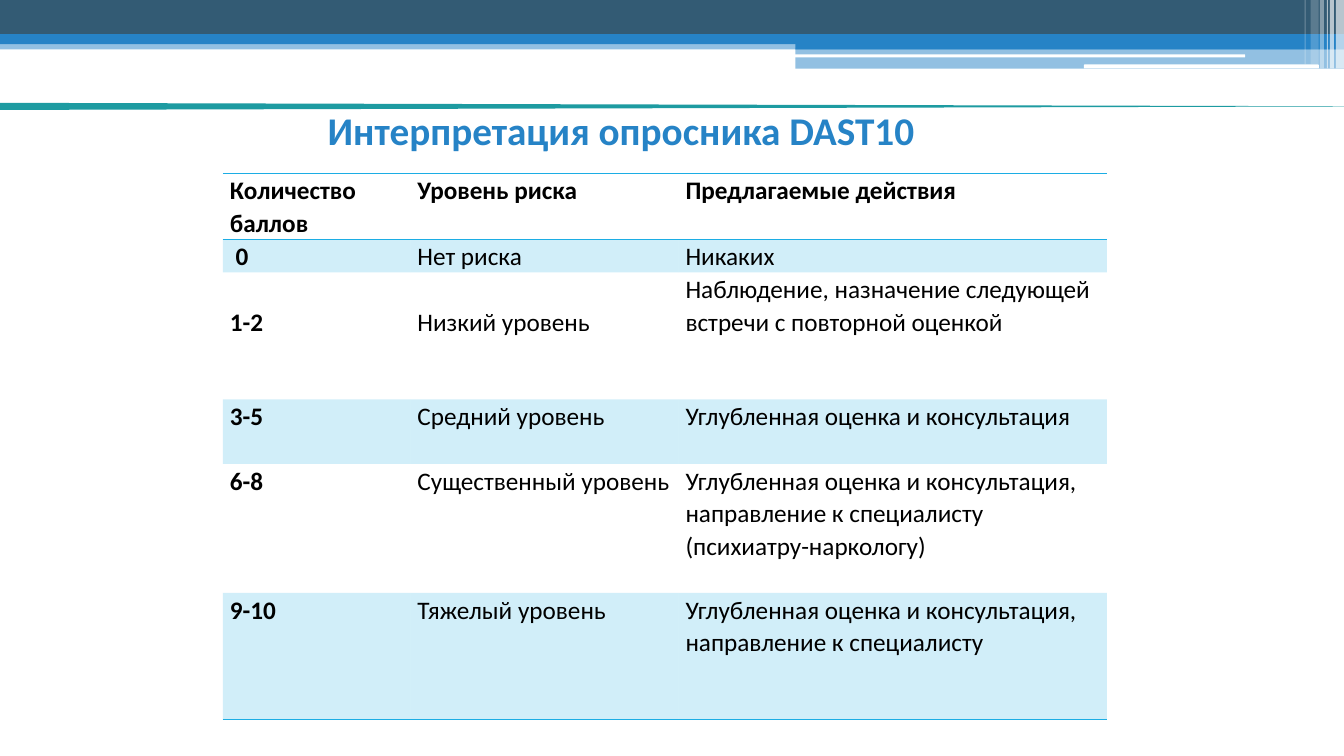
import dataclasses

import lxml.etree
import pptx
import pptx.dml.color
import pptx.dml.fill
import pptx.enum.shapes
import pptx.enum.text
import pptx.oxml.ns
import pptx.shapes.autoshape
import pptx.slide
import pptx.table
import pptx.util

SHAPES = pptx.enum.shapes.MSO_SHAPE
SLIDE_WIDTH = pptx.util.Inches(13.33)
SLIDE_HEIGHT = pptx.util.Inches(7.5)
FONT = "Calibri"
PLAIN_TABLE_STYLE = "{2D5ABB26-0587-4C30-8999-92F81FD0307C}"
COLORS = {
    "navy": "335B74",
    "blue": "2683C6",
    "teal": "1D9BA1",
    "cyan": "1CADE4",
    "white": "FFFFFF",
    "black": "000000",
}


@dataclasses.dataclass(frozen=True)
class Band:
    left: float
    top: float
    width: float
    height: float
    color: str
    opacity: int = 100
    geometry: SHAPES = SHAPES.RECTANGLE
    rotation: int = 0


@dataclasses.dataclass(frozen=True)
class RiskRow:
    height: float
    texts: tuple[str, str, str]
    lead: tuple[float, float, float] = (0, 0, 0)
    header: bool = False
    shaded: bool = False
    top_rule: bool = False
    bottom_rule: bool = False


HEADER_BANDS = [
    Band(0, 5.33, 100, 1.2, "blue", 50),
    Band(0, 0, 100, 4.53, "navy"),
    Band(0, 4.53, 100, 1.33, "blue"),
    Band(59.19, 5.2, 40.81, 1.33, "blue"),
    Band(59.19, 6.4, 40.81, 2.67, "blue", 50),
    Band(59.11, 7.2, 33.53, 0.4, "white", geometry=SHAPES.ROUNDED_RECTANGLE),
    Band(80.65, 8.53, 17.48, 0.53, "white", geometry=SHAPES.ROUNDED_RECTANGLE),
    Band(99.4, 0, 0.6, 9.07, "white", 65),
    Band(98.95, 0, 0.3, 9.07, "white", 65),
    Band(98.72, 0, 0.08, 9.07, "white", 60),
    Band(98.2, 0, 0.3, 9.07, "white", 40),
    Band(97.52, 0, 0.6, 8.53, "white", 20),
    Band(97.07, 0, 0.08, 8.53, "white", 30),
    Band(51.39, -77.73, 0.53, 183.6, "teal", geometry=SHAPES.ISOSCELES_TRIANGLE, rotation=90),
]

COLUMN_WIDTHS = [13.95, 19.95, 31.88]
LINE = 4.35
RISK_ROWS = [
    RiskRow(8.67, ("Количество баллов", "Уровень риска", "Предлагаемые действия"),
            header=True, top_rule=True, bottom_rule=True),
    RiskRow(4.4, (" 0", "Нет риска", "Никаких"), shaded=True),
    RiskRow(16.8, ("1-2", "Низкий уровень",
                   "Наблюдение, назначение следующей встречи с повторной оценкой"),
            lead=(LINE, LINE, 0)),
    RiskRow(8.53, ("3-5", "Средний уровень", "Углубленная оценка и консультация"), shaded=True),
    RiskRow(17.07, ("6-8", "Существенный уровень",
                    "Углубленная оценка и консультация, направление к специалисту "
                    "(психиатру-наркологу)")),
    RiskRow(16.8, ("9-10", "Тяжелый уровень",
                   "Углубленная оценка и консультация, направление к специалисту"),
            shaded=True, bottom_rule=True),
]


def across(percent: float) -> int:
    return round(SLIDE_WIDTH * percent / 100)


def down(percent: float) -> int:
    return round(SLIDE_HEIGHT * percent / 100)


def rgb(color: str) -> pptx.dml.color.RGBColor:
    return pptx.dml.color.RGBColor.from_string(COLORS[color])


def paint(fill: pptx.dml.fill.FillFormat, owner: lxml.etree.ElementBase,
          color: str, opacity: int) -> None:
    fill.solid()
    fill.fore_color.rgb = rgb(color)
    if opacity < 100:
        tint = owner.find(".//" + pptx.oxml.ns.qn("a:srgbClr"))
        alpha = lxml.etree.SubElement(tint, pptx.oxml.ns.qn("a:alpha"))
        alpha.set("val", str(opacity * 1000))


def draw_band(slide: pptx.slide.Slide, band: Band) -> None:
    strip = slide.shapes.add_shape(band.geometry, across(band.left), down(band.top),
                                   across(band.width), down(band.height))
    strip.shadow.inherit = False
    strip.rotation = band.rotation
    strip.line.fill.background()
    paint(strip.fill, strip.element.spPr, band.color, band.opacity)


def write_title(slide: pptx.slide.Slide, text: str) -> None:
    heading = slide.shapes.title
    heading.left, heading.top = across(24.38), down(11.33)
    heading.width, heading.height = across(71.94), down(11.6)
    frame = heading.text_frame
    frame.text = text
    frame.word_wrap = True
    frame.auto_size = pptx.enum.text.MSO_AUTO_SIZE.NONE
    frame.vertical_anchor = pptx.enum.text.MSO_ANCHOR.MIDDLE
    frame.margin_left = frame.margin_right = frame.margin_top = frame.margin_bottom = 0
    paragraph = frame.paragraphs[0]
    paragraph.alignment = pptx.enum.text.PP_ALIGN.LEFT
    set_font(paragraph, 28, "blue", True)


def set_font(paragraph, size: float, color: str, bold: bool) -> None:
    paragraph.font.name = FONT
    paragraph.font.size = pptx.util.Pt(size)
    paragraph.font.bold = bold
    paragraph.font.color.rgb = rgb(color)


def add_rule(properties: lxml.etree.ElementBase, side: str) -> None:
    rule = lxml.etree.Element(pptx.oxml.ns.qn(f"a:{side}"), w=str(pptx.util.Pt(1)))
    fill = lxml.etree.SubElement(rule, pptx.oxml.ns.qn("a:solidFill"))
    lxml.etree.SubElement(fill, pptx.oxml.ns.qn("a:srgbClr"), val=COLORS["cyan"])
    properties.insert(0, rule)


def fill_cell(cell: pptx.table._Cell, row: RiskRow, column: int) -> None:
    cell.text = row.texts[column]
    cell.margin_left = cell.margin_right = across(0.53)
    cell.margin_top, cell.margin_bottom = down(row.lead[column]), 0
    paragraph = cell.text_frame.paragraphs[0]
    paragraph.line_spacing = 1.07
    set_font(paragraph, 18, "black", row.header or column == 0)
    properties = cell._tc.get_or_add_tcPr()
    if row.shaded:
        paint(cell.fill, properties, "cyan", 20)
    else:
        cell.fill.background()
    if row.bottom_rule:
        add_rule(properties, "lnB")
    if row.top_rule:
        add_rule(properties, "lnT")


def draw_risk_table(slide: pptx.slide.Slide) -> None:
    frame = slide.shapes.add_table(
        len(RISK_ROWS), len(COLUMN_WIDTHS), across(16.58), down(22.93),
        across(sum(COLUMN_WIDTHS)), down(sum(row.height for row in RISK_ROWS)))
    risks = frame.table
    risks.horz_banding = False
    frame.element.find(".//" + pptx.oxml.ns.qn("a:tableStyleId")).text = PLAIN_TABLE_STYLE
    for column, width in enumerate(COLUMN_WIDTHS):
        risks.columns[column].width = across(width)
    for index, row in enumerate(RISK_ROWS):
        risks.rows[index].height = down(row.height)
        for column in range(len(COLUMN_WIDTHS)):
            fill_cell(risks.cell(index, column), row, column)


def main() -> None:
    deck = pptx.Presentation()
    deck.slide_width, deck.slide_height = SLIDE_WIDTH, SLIDE_HEIGHT
    slide = deck.slides.add_slide(deck.slide_layouts.get_by_name("Title Only"))
    for band in HEADER_BANDS:
        draw_band(slide, band)
    write_title(slide, "Интерпретация опросника DAST10")
    draw_risk_table(slide)
    deck.save("out.pptx")


if __name__ == "__main__":
    main()
